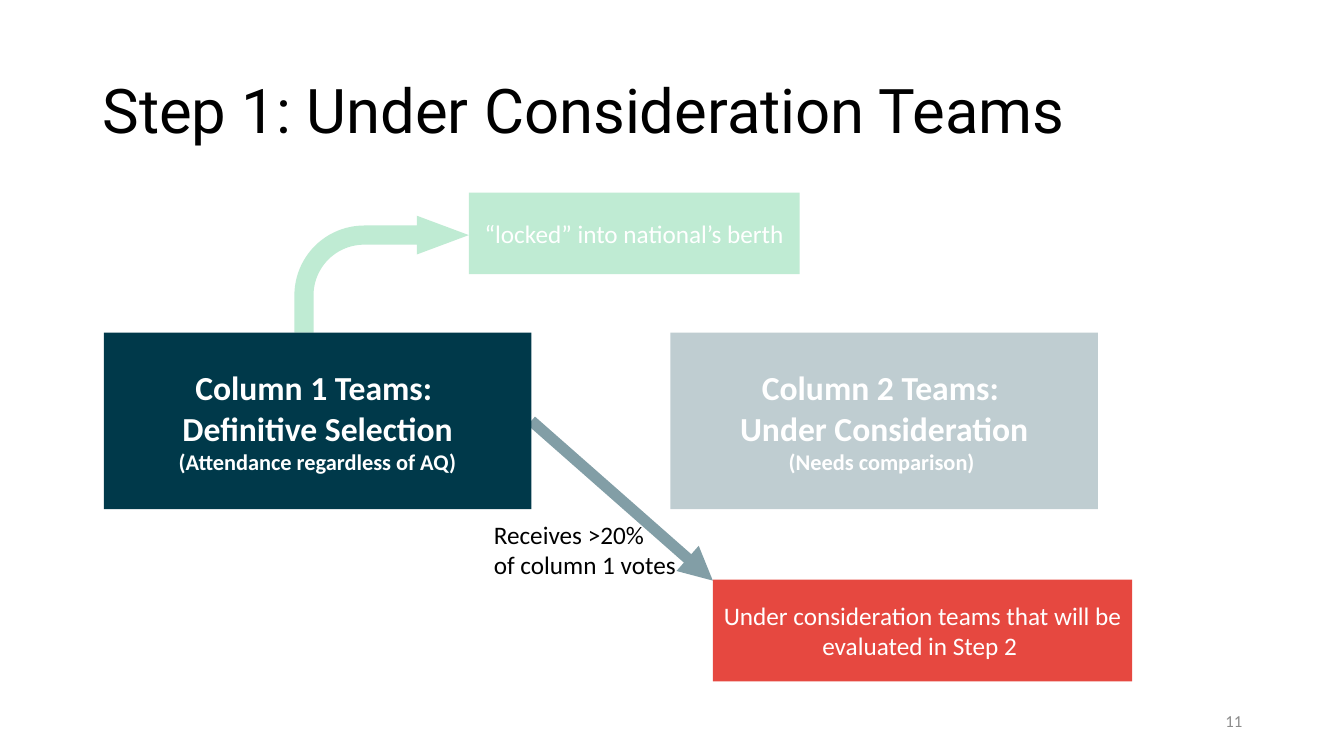
from dataclasses import dataclass

from pptx import Presentation
from pptx.dml.color import RGBColor
from pptx.enum.shapes import MSO_CONNECTOR, MSO_SHAPE as SHAPE
from pptx.enum.text import MSO_ANCHOR as ANCHOR, MSO_AUTO_SIZE as AUTO, PP_ALIGN as ALIGN
from pptx.oxml.ns import qn
from pptx.util import Inches, Pt
from lxml.etree import SubElement


@dataclass(frozen=True)
class Theme:
    navy: str = "00394A"
    green: str = "00B050"
    red: str = "E64840"
    slate: str = "829EA6"
    grey: str = "8C8C8C"
    white: str = "FFFFFF"
    black: str = "000000"
    title_font: str = "Roboto"
    body_font: str = "Calibri"
    title: int = 44
    heading: int = 24
    body: int = 18
    caption: int = 16
    number: int = 12
    faded: int = 25


class SlideBuilder:
    def __init__(self, slide, theme):
        self.shapes = slide.shapes
        self.theme = theme

    def set_lines(self, sp, lines, color, align, anchor, font=None, bold=None):
        """Fill a shape with one paragraph per (text, size) pair."""
        tf = sp.text_frame
        tf.word_wrap = True
        tf.vertical_anchor = anchor
        for i, (text, size) in enumerate(lines):
            p = tf.add_paragraph() if i else tf.paragraphs[0]
            p.alignment = align
            r = p.add_run()
            r.text = text
            r.font.name = font or self.theme.body_font
            r.font.size = Pt(size)
            r.font.bold = bold
            r.font.color.rgb = RGBColor.from_string(color)
        return tf

    def text(self, box, lines, color, align=ALIGN.LEFT, anchor=ANCHOR.MIDDLE, font=None):
        sp = self.shapes.add_textbox(*map(Inches, box))
        return self.set_lines(sp, lines, color, align, anchor, font)

    def shape(self, kind, box, fill, opacity=100):
        sp = self.shapes.add_shape(kind, *map(Inches, box))
        sp.shadow.inherit = False
        sp.fill.solid()
        sp.fill.fore_color.rgb = RGBColor.from_string(fill)
        sp.line.fill.background()
        if opacity < 100:
            clr = sp._element.spPr.find(qn("a:solidFill"))[0]
            SubElement(clr, qn("a:alpha"), val=str(opacity * 1000))
        return sp

    def card(self, box, fill, lines, opacity=100, bold=None):
        sp = self.shape(SHAPE.RECTANGLE, box, fill, opacity)
        self.set_lines(sp, lines, self.theme.white, ALIGN.CENTER, ANCHOR.MIDDLE, bold=bold)
        return sp

    def bent_arrow(self, box, fill, adjustments, opacity):
        sp = self.shape(SHAPE.BENT_ARROW, box, fill, opacity)
        for i, value in enumerate(adjustments):
            sp.adjustments[i] = value

    def arrow(self, start, end, color, width):
        cx = self.shapes.add_connector(MSO_CONNECTOR.STRAIGHT, *map(Inches, start + end))
        cx.line.color.rgb = RGBColor.from_string(color)
        cx.line.width = Pt(width)
        sp_pr = cx._element.spPr
        SubElement(sp_pr.find(qn("a:ln")), qn("a:tailEnd"), type="triangle")
        SubElement(sp_pr, qn("a:effectLst"))
        return cx


def main():
    prs = Presentation()
    prs.slide_width, prs.slide_height = Inches(13.33), Inches(7.5)
    t = Theme()
    s = SlideBuilder(prs.slides.add_slide(prs.slide_layouts[6]), t)

    title = s.text((0.92, 0.4, 11.5, 1.45), [("Step 1: Under Consideration Teams", t.title)],
                   t.black, font=t.title_font)
    title.paragraphs[0].line_spacing = 0.9
    s.text((9.42, 6.95, 3, 0.4), [("11", t.number)], t.grey, ALIGN.RIGHT)

    s.bent_arrow((2.92, 2.14, 1.73, 1.16), t.green, (0.164, 0.166, 0.445, 0.597), t.faded)
    # The arrow lies behind the column cards, so it is drawn before them.
    vote_arrow = s.arrow((5.27, 4.18), (7.07, 5.76), t.slate, 8)

    columns = [
        (1.03, 100, "Column 1 Teams: ", "Definitive Selection", "(Attendance regardless of AQ)"),
        (6.65, t.faded, "Column 2 Teams: ", "Under Consideration", "(Needs comparison) "),
    ]
    cards = [
        s.card((left, 3.3, 4.24, 1.75), t.navy,
               [(name, t.heading), (status, t.heading), (note, t.caption)], opacity, bold=True)
        for left, opacity, name, status, note in columns
    ]
    vote_arrow.begin_connect(cards[0], 3)

    s.card((4.65, 1.91, 3.28, 0.81), t.green,
           [("“locked” into national’s berth", t.body)], t.faded)
    s.card((7.07, 5.75, 4.16, 1.01), t.red,
           [("Under consideration teams that will be evaluated in Step 2 ", t.body)])
    votes = s.text((4.8, 5.1, 2.03, 0.71),
                   [("Receives >20%", t.body), ("of column 1 votes", t.body)],
                   t.black, anchor=ANCHOR.TOP)
    votes.auto_size = AUTO.SHAPE_TO_FIT_TEXT

    prs.save("out.pptx")


if __name__ == "__main__":
    main()
